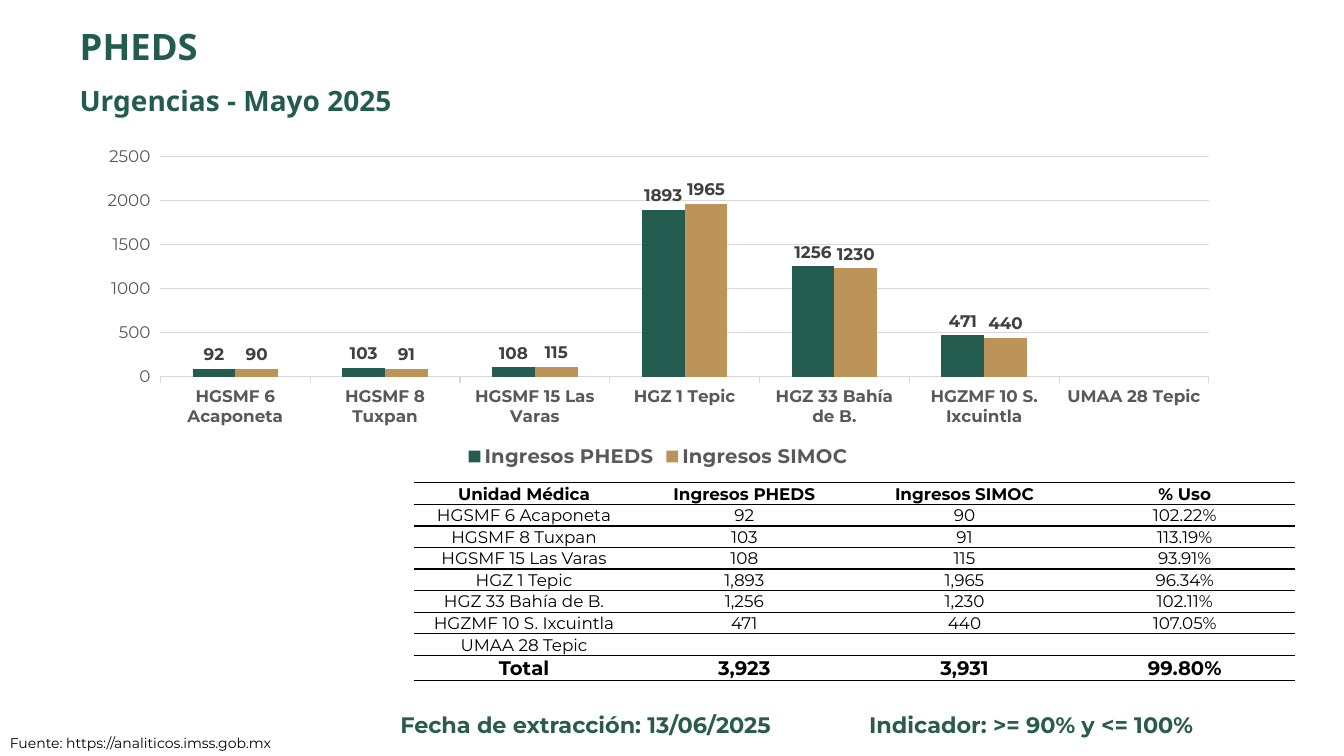
from dataclasses import dataclass
from typing import Any, Optional

from lxml import etree
from pptx import Presentation
from pptx import util as u
from pptx.chart import data as chart_data
from pptx.dml.color import RGBColor
from pptx.enum import chart as ch
from pptx.enum import text as tx
from pptx.oxml.ns import qn

GREEN = RGBColor(0x23, 0x5C, 0x4F)
NOTE_GREEN = RGBColor(0x2A, 0x5C, 0x4B)
BAR_GREEN = RGBColor(0x24, 0x5C, 0x4F)
GOLD = RGBColor(0xBC, 0x94, 0x5A)
BLACK = RGBColor(0x00, 0x00, 0x00)
AXIS_GREY = RGBColor(0x59, 0x59, 0x59)
LABEL_GREY = RGBColor(0x40, 0x40, 0x40)
GRID_GREY = RGBColor(0xD9, 0xD9, 0xD9)

SLIDE_WIDTH, SLIDE_HEIGHT = u.Inches(13.33), u.Inches(7.5)
HEADING_FONT, BODY_FONT = "Noto Sans", "Montserrat"
PHEDS, SIMOC = "Ingresos PHEDS", "Ingresos SIMOC"


@dataclass(frozen=True)
class Area:
    """A place on the slide, in percent of its width and height."""
    left: float
    top: float
    width: float
    height: float

    def lengths(self) -> tuple[int, int, int, int]:
        return (int(SLIDE_WIDTH * self.left / 100), int(SLIDE_HEIGHT * self.top / 100),
                int(SLIDE_WIDTH * self.width / 100), int(SLIDE_HEIGHT * self.height / 100))


@dataclass(frozen=True)
class Style:
    size: float
    color: RGBColor = BLACK
    bold: bool = False
    name: str = BODY_FONT


@dataclass(frozen=True)
class Caption:
    wording: str
    area: Area
    style: Style
    align: Any = tx.PP_ALIGN.LEFT
    wrap: bool = True
    spacing: float = 1.0


@dataclass(frozen=True)
class Unit:
    name: str
    pheds: Optional[int] = None
    simoc: Optional[int] = None

    def cells(self) -> list[str]:
        if not self.pheds or not self.simoc:
            return [self.name, "", "", ""]
        return [self.name, f"{self.pheds:,}", f"{self.simoc:,}", f"{self.pheds / self.simoc:.2%}"]


UNITS = (
    Unit("HGSMF 6 Acaponeta", 92, 90),
    Unit("HGSMF 8 Tuxpan", 103, 91),
    Unit("HGSMF 15 Las Varas", 108, 115),
    Unit("HGZ 1 Tepic", 1893, 1965),
    Unit("HGZ 33 Bahía de B.", 1256, 1230),
    Unit("HGZMF 10 S. Ixcuintla", 471, 440),
    Unit("UMAA 28 Tepic"),
)
TOTAL = Unit("Total", sum(unit.pheds or 0 for unit in UNITS), sum(unit.simoc or 0 for unit in UNITS))

NOTE_STYLE = Style(16, NOTE_GREEN, True)
HEADING = Caption("PHEDS", Area(5.18, 3.2, 71.1, 6.53),
                  Style(26, GREEN, True, HEADING_FONT), spacing=0.9)
CAPTIONS = (
    Caption("Urgencias - Mayo 2025", Area(5.18, 10.93, 71.1, 6.53),
            Style(20, GREEN, True, HEADING_FONT), spacing=0.9),
    Caption("Fuente: https://analiticos.imss.gob.mx", Area(0, 96.53, 21.9, 3.6),
            Style(10), wrap=False),
    Caption("Fecha de extracción: 13/06/2025", Area(24.68, 93.47, 37.8, 4.93),
            NOTE_STYLE, tx.PP_ALIGN.CENTER),
    Caption("Indicador: >= 90% y <= 100%", Area(55.05, 93.47, 43.35, 4.93),
            NOTE_STYLE, tx.PP_ALIGN.CENTER),
)
CHART_AREA = Area(6.3, 18.53, 85.35, 44)
TABLE_AREA = Area(30.8, 63.87, 65.55, 25.73)
ROW_SHARE, TOTAL_SHARE = 2.82, 3.2


def apply(target: Any, formats: dict[str, Any]) -> None:
    for attribute, value in formats.items():
        setattr(target, attribute, value)


def format_font(font: Any, style: Style) -> None:
    apply(font, {"size": u.Pt(style.size), "bold": style.bold, "name": style.name})
    font.color.rgb = style.color


def fill_caption(box: Any, caption: Caption) -> None:
    apply(box, dict(zip(("left", "top", "width", "height"), caption.area.lengths())))
    apply(box.text_frame, {"word_wrap": caption.wrap, "auto_size": tx.MSO_AUTO_SIZE.NONE,
                           "vertical_anchor": tx.MSO_ANCHOR.TOP})
    paragraph = box.text_frame.paragraphs[0]
    apply(paragraph, {"alignment": caption.align, "line_spacing": caption.spacing})
    run = paragraph.add_run()
    run.text = caption.wording
    format_font(run.font, caption.style)


def rule_cell(cell: Any) -> None:
    """Leave the cell unfilled, with black rules above and below only."""
    cell.fill.background()
    properties = cell._tc.get_or_add_tcPr()
    for position, side in enumerate(("lnL", "lnR", "lnT", "lnB")):
        border = etree.Element(qn(f"a:{side}"), w=str(u.Pt(1)))
        if side in ("lnT", "lnB"):
            fill = etree.SubElement(border, qn("a:solidFill"))
            etree.SubElement(fill, qn("a:srgbClr"), val=str(BLACK))
        else:
            etree.SubElement(border, qn("a:noFill"))
        properties.insert(position, border)


def fill_cell(cell: Any, wording: str, style: Style) -> None:
    inset = u.Inches(0.01)
    apply(cell, {"margin_left": inset, "margin_top": inset, "margin_right": inset,
                 "margin_bottom": 0, "vertical_anchor": tx.MSO_ANCHOR.MIDDLE})
    rule_cell(cell)
    paragraph = cell.text_frame.paragraphs[0]
    paragraph.alignment = tx.PP_ALIGN.CENTER
    if wording:
        run = paragraph.add_run()
        run.text = wording
        format_font(run.font, style)
    else:
        etree.SubElement(paragraph._p, qn("a:endParaRPr"), sz=str(int(style.size * 100)))


def add_usage_table(slide: Any) -> None:
    rows = [["Unidad Médica", PHEDS, SIMOC, "% Uso"],
            *(unit.cells() for unit in UNITS), TOTAL.cells()]
    table = slide.shapes.add_table(len(rows), len(rows[0]), *TABLE_AREA.lengths()).table
    apply(table, {"first_row": False, "horz_banding": False})
    last = len(rows) - 1
    styles = {0: Style(12, bold=True), last: Style(14, bold=True)}
    for index, row in enumerate(rows):
        share = TOTAL_SHARE if index == last else ROW_SHARE
        table.rows[index].height = int(SLIDE_HEIGHT * share / 100)
        for column, wording in enumerate(row):
            fill_cell(table.cell(index, column), wording, styles.get(index, Style(12)))


def add_admissions_chart(slide: Any) -> None:
    admissions = chart_data.CategoryChartData()
    admissions.categories = [unit.name for unit in UNITS]
    admissions.add_series(PHEDS, [unit.pheds for unit in UNITS])
    admissions.add_series(SIMOC, [unit.simoc for unit in UNITS])
    chart = slide.shapes.add_chart(ch.XL_CHART_TYPE.COLUMN_CLUSTERED,
                                   *CHART_AREA.lengths(), admissions).chart
    format_font(chart.font, Style(10))
    apply(chart, {"has_title": False, "has_legend": True})
    apply(chart.legend, {"position": ch.XL_LEGEND_POSITION.BOTTOM, "include_in_layout": False})
    format_font(chart.legend.font, Style(14, AXIS_GREY, True))

    units, scale = chart.category_axis, chart.value_axis
    format_font(units.tick_labels.font, Style(12, AXIS_GREY, True))
    format_font(scale.tick_labels.font, Style(12, AXIS_GREY))
    apply(scale, {"minimum_scale": 0, "maximum_scale": 2500, "major_unit": 500,
                  "has_major_gridlines": True})
    scale.format.line.fill.background()
    for line in (units.format.line, scale.major_gridlines.format.line):
        line.color.rgb = GRID_GREY
        line.width = u.Pt(0.75)

    plot = chart.plots[0]
    apply(plot, {"gap_width": 150, "overlap": 0, "vary_by_categories": False})
    for series, color in zip(plot.series, (BAR_GREEN, GOLD)):
        series.format.fill.solid()
        series.format.fill.fore_color.rgb = color
        labels = series.data_labels
        apply(labels, {"show_value": True, "position": ch.XL_LABEL_POSITION.OUTSIDE_END})
        format_font(labels.font, Style(12, LABEL_GREY, True))


def main() -> None:
    deck = Presentation()
    apply(deck, {"slide_width": SLIDE_WIDTH, "slide_height": SLIDE_HEIGHT})
    slide = deck.slides.add_slide(deck.slide_layouts[5])
    fill_caption(slide.shapes.title, HEADING)
    add_usage_table(slide)
    add_admissions_chart(slide)
    for caption in CAPTIONS:
        fill_caption(slide.shapes.add_textbox(*caption.area.lengths()), caption)
    deck.save("out.pptx")


if __name__ == "__main__":
    main()
